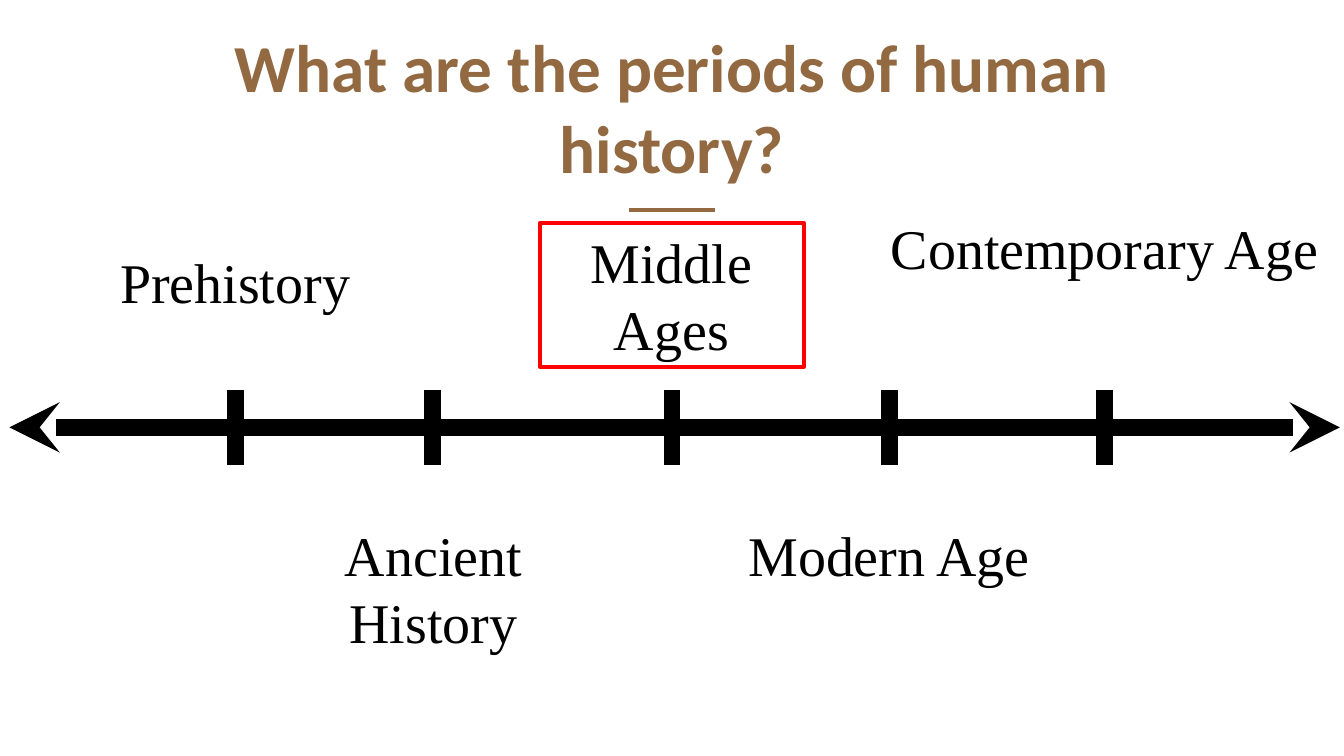
from lxml import etree
from pptx import Presentation
from pptx.dml.color import RGBColor
from pptx.enum.shapes import MSO_CONNECTOR, MSO_SHAPE
from pptx.enum.text import MSO_ANCHOR, PP_ALIGN
from pptx.oxml.ns import qn
from pptx.util import Inches, Pt

STRAIGHT = MSO_CONNECTOR.STRAIGHT
RECTANGLE = MSO_SHAPE.RECTANGLE
TOP, BOTTOM = MSO_ANCHOR.TOP, MSO_ANCHOR.BOTTOM
CENTER = PP_ALIGN.CENTER
TITLE_ONLY = 5

# Content: each period has its tick position and label box (left, top, width, height)
TITLE = "What are the periods of human history?"
PERIODS = [
    ("Prehistory", 1.75, (0.46, 1.74, 2.58, 0.71)),
    ("Ancient History", 3.22, (2.17, 3.77, 2.11, 1.21)),
    ("Middle Ages", 5, (4.04, 1.59, 1.91, 1.21)),
    ("Modern Age", 6.62, (5.45, 3.77, 2.33, 1.21)),
    ("Contemporary Age", 8.22, (6.51, 1.49, 3.42, 1.21)),
]
HIGHLIGHT = (4.02, 1.66, 1.96, 1.07)
AXIS_Y, AXIS_LEFT, AXIS_RIGHT = 3.18, 0.07, 9.97
TICK_HALF = 0.28

BROWN, BLACK, RED, WHITE = "926940", "000000", "FF0000", "FFFFFF"
TITLE_FONT = {"name": "Calibri", "size": Pt(36), "bold": True}
LABEL_FONT = {"name": "Times New Roman", "size": Pt(30), "bold": False}


def color(value):
    return RGBColor.from_string(value)


def inches(values):
    return [Inches(value) for value in values]


def write(box, text, anchor, font, text_color):
    frame = box.text_frame
    frame.word_wrap = True
    frame.vertical_anchor = anchor
    for side in ("left", "top", "right", "bottom"):
        setattr(frame, f"margin_{side}", Inches(0.1))
    para = frame.paragraphs[0]
    para.alignment = CENTER
    para.line_spacing = 1.0
    span = para.add_run()
    span.text = text
    for name, value in font.items():
        setattr(span.font, name, value)
    span.font.color.rgb = color(text_color)


def add_line(page, ends, line_color, width, arrows=False):
    line = page.shapes.add_connector(STRAIGHT, *inches(ends))
    line.line.color.rgb = color(line_color)
    line.line.width = Pt(width)
    properties = line._element.spPr
    if arrows:
        outline = properties.find(qn("a:ln"))
        for end in ("a:headEnd", "a:tailEnd"):
            etree.SubElement(outline, qn(end), type="stealth", w="med", len="med")
    etree.SubElement(properties, qn("a:effectLst"))


# Widescreen page, 16:9
deck = Presentation()
deck.slide_width = Inches(10)
deck.slide_height = Inches(10 * 9 / 16)
page = deck.slides.add_slide(deck.slide_layouts[TITLE_ONLY])
page.background.fill.solid()
page.background.fill.fore_color.rgb = color(WHITE)

# Title and its short rule
add_line(page, (4.68, 1.56, 5.32, 1.56), BROWN, 2.25)
title = page.shapes.title
title.left, title.top, title.width, title.height = inches((1.39, 0.08, 7.22, 1.41))
write(title, TITLE, BOTTOM, TITLE_FONT, BROWN)

# Period labels
for label, _, place in PERIODS:
    box = page.shapes.add_textbox(*inches(place))
    write(box, label, TOP, LABEL_FONT, BLACK)

# Timeline axis and ticks
add_line(page, (AXIS_LEFT, AXIS_Y, AXIS_RIGHT, AXIS_Y), BLACK, 9, arrows=True)
for _, x, _ in PERIODS:
    add_line(page, (x, AXIS_Y - TICK_HALF, x, AXIS_Y + TICK_HALF), BLACK, 9)

# Frame around the highlighted period
highlight = page.shapes.add_shape(RECTANGLE, *inches(HIGHLIGHT))
highlight.shadow.inherit = False
highlight.fill.background()
highlight.line.color.rgb = color(RED)
highlight.line.width = Pt(2.25)
etree.SubElement(highlight._element.spPr.find(qn("a:ln")), qn("a:round"))

deck.save("out.pptx")
